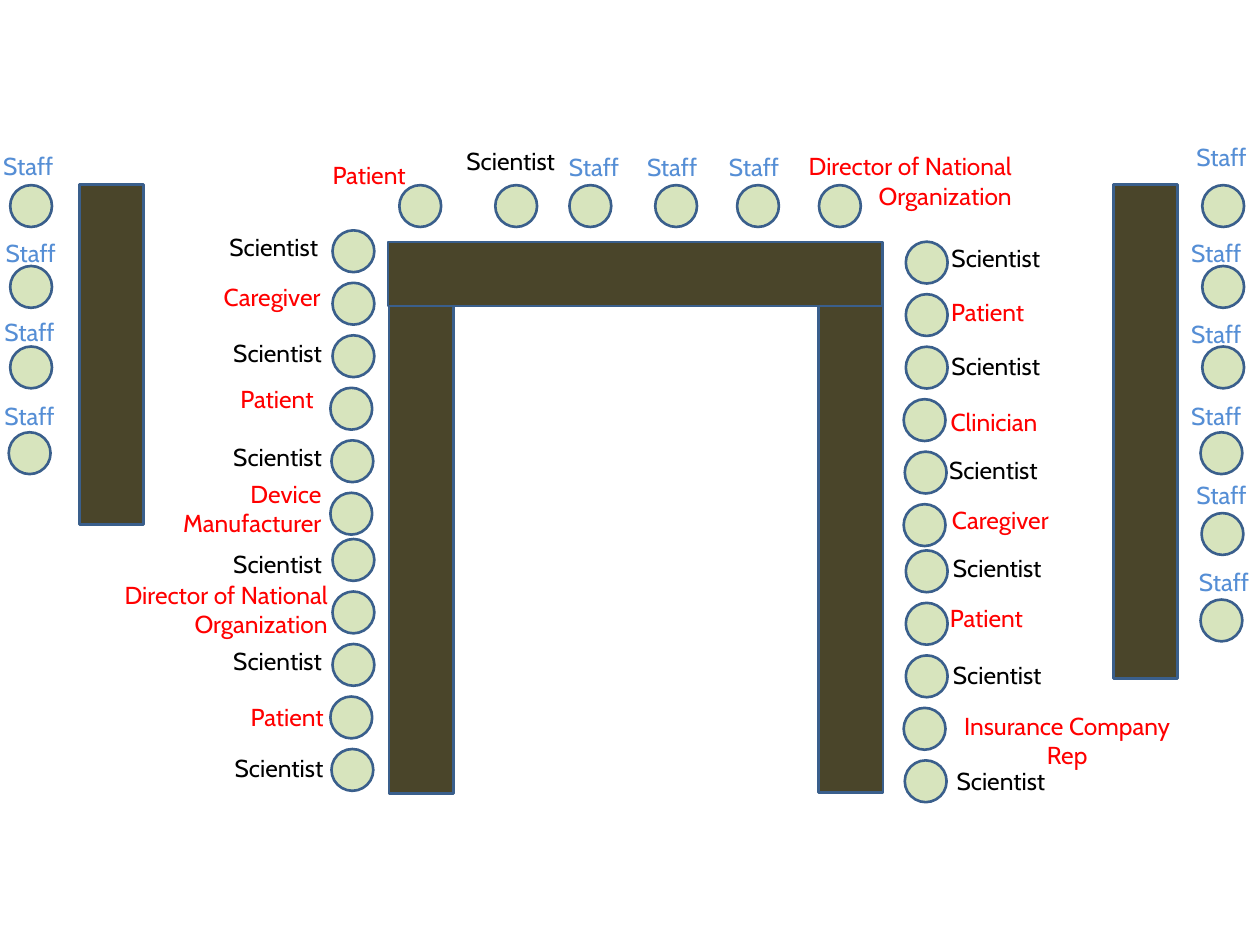
from pptx import Presentation
from pptx.dml.color import RGBColor
from pptx.enum.shapes import MSO_SHAPE
from pptx.enum.text import MSO_AUTO_SIZE, PP_ALIGN
from pptx.util import Pt

RECTANGLE, OVAL = MSO_SHAPE.RECTANGLE, MSO_SHAPE.OVAL
CENTER, RIGHT = PP_ALIGN.CENTER, PP_ALIGN.RIGHT
GROW = MSO_AUTO_SIZE.SHAPE_TO_FIT_TEXT

BLACK, RED, BLUE = "000000", "FF0000", "558ED5"
TABLE_THICKNESS = 36.7
SEAT_SIZE = 23.9
DIRECTOR = "Director of National Organization"
DEVICE_MAKER = "Device\vManufacturer"
INSURER = "Insurance Company Rep"

# role: colour, label width, label height, alignment
ROLES = {
    "Scientist": (BLACK, 77, 24.3, CENTER),
    "Staff": (BLUE, 77, 24.3, CENTER),
    "Patient": (RED, 115, 24.3, CENTER),
    "Caregiver": (RED, 115, 24.3, CENTER),
    "Clinician": (RED, 115, 24.3, CENTER),
    DIRECTOR: (RED, 137.5, 41.2, RIGHT),
    DEVICE_MAKER: (RED, 148.3, 41.2, RIGHT),
    INSURER: (RED, 148.3, 24.3, CENTER),
}


def rgb(value):
    return RGBColor.from_string(value)


def add_outlined(kind, left, top, width, height, fill):
    shape = slide.shapes.add_shape(kind, Pt(left), Pt(top), Pt(width), Pt(height))
    shape.shadow.inherit = False
    shape.fill.solid()
    shape.fill.fore_color.rgb = rgb(fill)
    shape.line.color.rgb = rgb("3A5F8C")
    shape.line.width = Pt(1.5)
    return shape


prs = Presentation()
prs.slide_width, prs.slide_height = Pt(720), Pt(540)
slide = prs.slides.add_slide(prs.slide_layouts[6])

# Tables: left, top, length, rotation
for left, top, length, rotation in [
    (513.4, 228.2, 282.5, 90),
    (-33.5, 184.3, 194.4, 90),
    (99.4, 294, 282.5, 90),
    (344.9, 293.3, 282.5, 90),
    (221.8, 138.2, 282.5, 0),
]:
    table = add_outlined(RECTANGLE, left, top, length, TABLE_THICKNESS, "4A452A")
    table.rotation = rotation

# Seats: each arm of the U has six seats, then five more after a narrower gap
arm_tops = [131.6 + 30 * i for i in range(6)] + [308 + 30 * i for i in range(5)]
arm_lefts = [190, 190, 190, 188.8, 189.4, 188.8, 190, 190, 190, 188.8, 189.4]
arm_seats = list(zip(arm_lefts, arm_tops))
right_arm_seats = [(left + 327.6, top + 6.5) for left, top in arm_seats]
head_seats = [(left, 105.8) for left in (228.2, 283, 325.4, 374.4, 421.2, 468)]
staff_tops = [105.8, 152, 198, 247, 293.2, 342.6]
left_staff_seats = list(zip([5.8, 5.8, 5.8, 5], staff_tops))
right_staff_seats = list(zip([687, 687, 687, 686, 686.6, 686], staff_tops))

for left, top in (arm_seats + right_arm_seats + head_seats
                  + left_staff_seats + right_staff_seats):
    add_outlined(OVAL, left, top, SEAT_SIZE, SEAT_SIZE, "D7E4BD")

# Labels: role, left, top
left_arm_labels = [
    ("Scientist", 118, 129), ("Caregiver", 98, 157.7),
    ("Scientist", 120.2, 189.4), ("Patient", 100.8, 216),
    ("Scientist", 120.2, 249.1), (DEVICE_MAKER, 42.5, 270),
    ("Scientist", 120.2, 310.3), (DIRECTOR, 56.9, 327.6),
    ("Scientist", 120.2, 365.8), ("Patient", 106.6, 397.4),
    ("Scientist", 121, 427),
]
right_arm_labels = [
    ("Scientist", 530.6, 135.4), ("Patient", 506.9, 166.3),
    ("Scientist", 530.6, 197.3), ("Clinician", 510.5, 229),
    ("Scientist", 529.2, 256.3), ("Caregiver", 514.1, 285.1),
    ("Scientist", 531.4, 312.5), ("Patient", 506.2, 341.3),
    ("Scientist", 531.4, 373.7), (INSURER, 535.7, 402.5),
    ("Scientist", 533.5, 434.2),
]
head_labels = [
    ("Patient", 153.4, 87.8), ("Scientist", 253.4, 79.9),
    ("Staff", 301, 83.5), ("Staff", 345.6, 83.5), ("Staff", 392.4, 83.5),
    (DIRECTOR, 447.8, 82.8),
]
staff_labels = [("Staff", left, top) for left, top in [
    (-22.3, 82.8), (-20.9, 132.5), (-21.6, 177.8), (-21.6, 225.4),
    (659.5, 77.8), (656.6, 132.5), (656.6, 178.6), (656.6, 225.4),
    (659.5, 270.7), (661, 320.4),
]]

for role, left, top in left_arm_labels + right_arm_labels + head_labels + staff_labels:
    color, width, height, alignment = ROLES[role]
    label = slide.shapes.add_textbox(Pt(left), Pt(top), Pt(width), Pt(height))
    frame = label.text_frame
    frame.word_wrap = True
    frame.auto_size = GROW
    frame.text = role
    paragraph = frame.paragraphs[0]
    paragraph.alignment = alignment
    paragraph.font.name = "Cabin"
    paragraph.font.size = Pt(14)
    paragraph.font.color.rgb = rgb(color)

prs.save("out.pptx")
